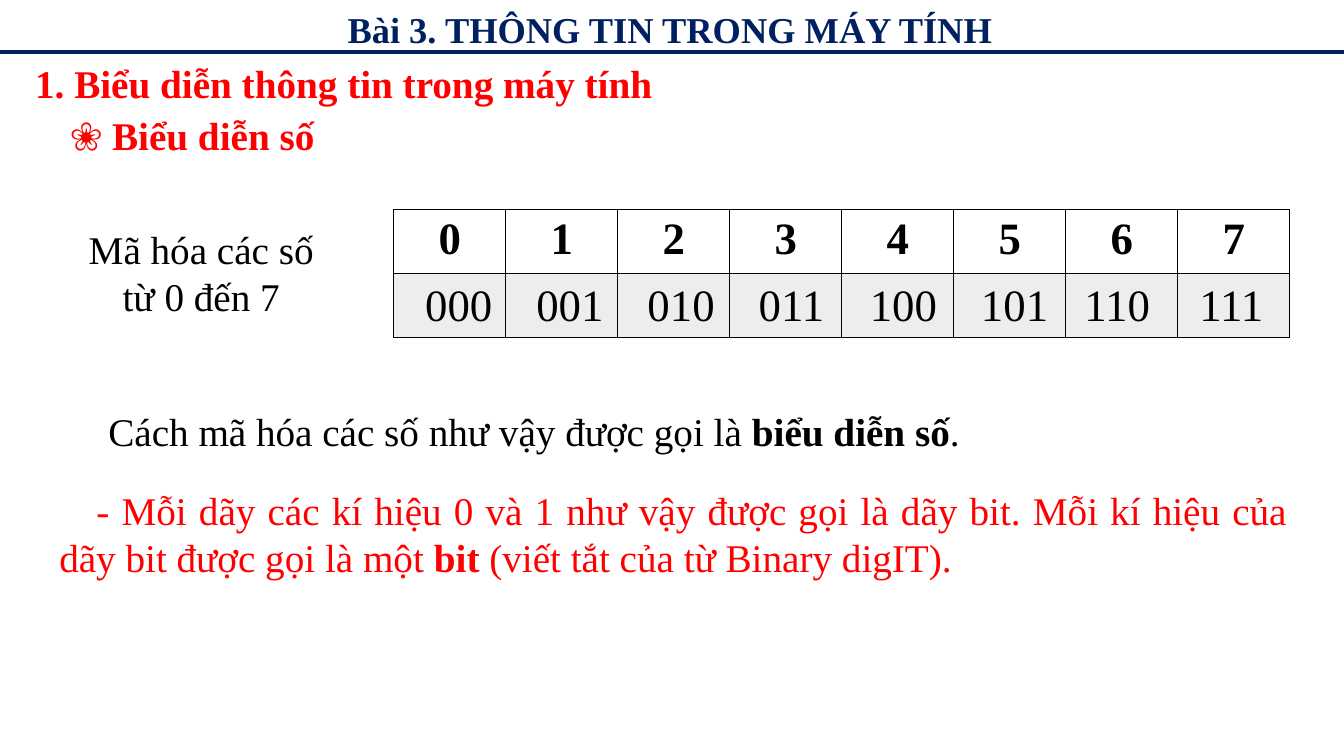
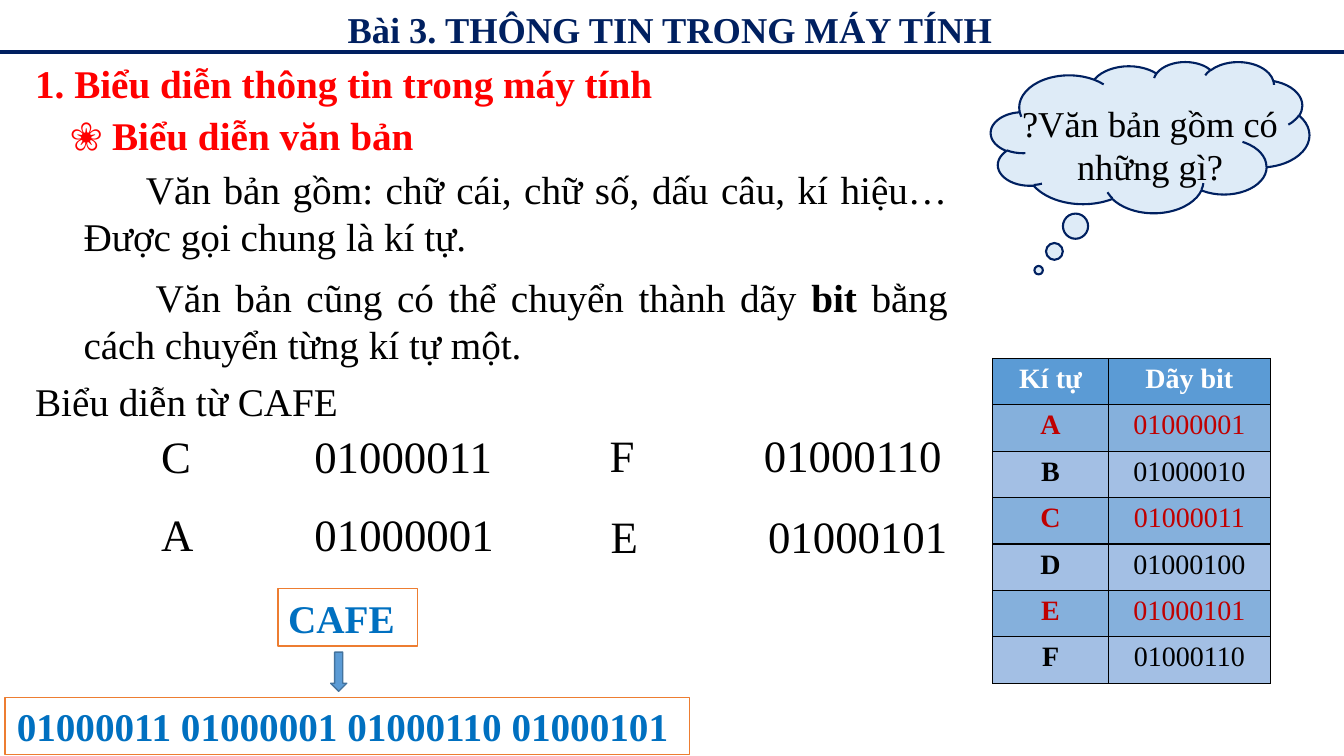
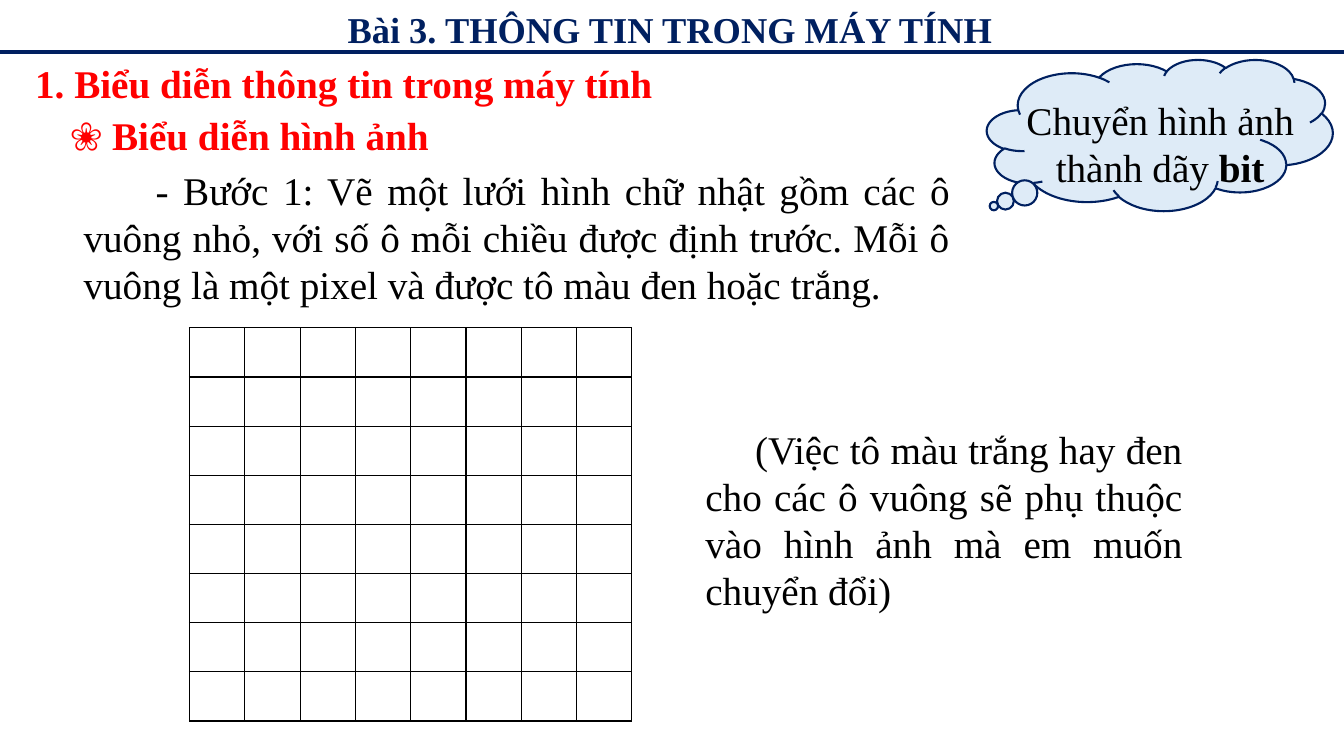
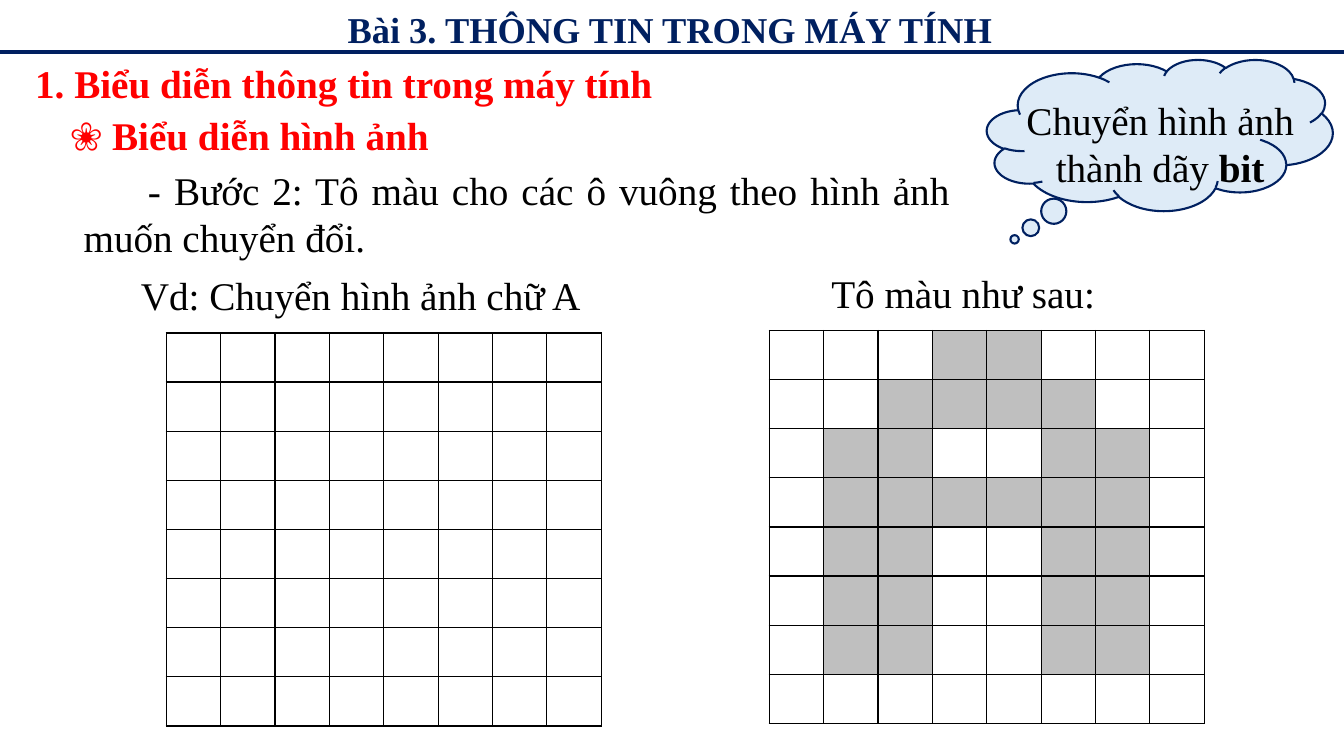
from lxml import etree
from pptx import Presentation
from pptx import util as u
from pptx.dml import color as c
from pptx.enum import shapes, text
from pptx.oxml import ns

Pt = u.Pt
RGB = c.RGBColor.from_string
NAVY = RGB("002060")
RED = RGB("FF0000")
DARK_RED = RGB("C00000")
BLACK = RGB("000000")
WHITE = RGB("FFFFFF")
GRAY = RGB("BFBFBF")
PALE_GRAY = RGB("EDEDED")
PALE_BLUE = RGB("DEEBF7")
BLUE = RGB("5B9BD5")
BLUE_EDGE = RGB("43739E")
BAND_DARK = RGB("85B0DC")
BAND_LIGHT = RGB("A3BFE4")
TEXT_BLUE = RGB("0070C0")
ORANGE = RGB("ED7D31")

FONT = "Times New Roman"
LEFT = text.PP_ALIGN.LEFT
CENTER = text.PP_ALIGN.CENTER
JUSTIFY = text.PP_ALIGN.JUSTIFY

GRID_SIZE = 8
GRID_ROW = 35.1
BLANK_GRID = ["." * GRID_SIZE] * GRID_SIZE
LETTER_A = [
    "...##...",
    "..####..",
    ".##..##.",
    ".######.",
    ".##..##.",
    ".##..##.",
    ".##..##.",
    "........",
]
CHARACTERS = "ABCDEF"


def bits(character):
    return format(ord(character), "08b")


def write(frame, words, size=28, color=BLACK, bold=False, align=LEFT, indent=0):
    """Fill the first paragraph; words between bars are bold."""
    para = frame.paragraphs[0]
    para.alignment = align
    if indent:
        para._p.get_or_add_pPr().set("indent", str(Pt(indent)))
    for index, part in enumerate(words.split("|")):
        span = para.add_run()
        span.text = part
        values = {"name": FONT, "size": Pt(size), "bold": bold or index % 2 == 1}
        for key, value in values.items():
            setattr(span.font, key, value)
        span.font.color.rgb = color


def add_text(page, left, top, width, height, words, **style):
    box = page.shapes.add_textbox(Pt(left), Pt(top), Pt(width), Pt(height))
    box.text_frame.word_wrap = True
    write(box.text_frame, words, **style)


def add_shape(page, kind, left, top, width, height, fill, edge, weight=1):
    shape = page.shapes.add_shape(kind, Pt(left), Pt(top), Pt(width), Pt(height))
    shape.shadow.inherit = False
    shape.fill.solid()
    shape.fill.fore_color.rgb = fill
    shape.line.color.rgb = edge
    shape.line.width = Pt(weight)
    return shape


def add_frame(page, left, top, width, words, align):
    box = add_shape(page, shapes.MSO_SHAPE.RECTANGLE, left, top, width, 41, WHITE, ORANGE)
    write(box.text_frame, words, color=TEXT_BLUE, bold=True, align=align)


def add_cloud(page, left, top, width, tail):
    cloud = add_shape(page, shapes.MSO_SHAPE.CLOUD_CALLOUT, left, top, width, 108,
                      PALE_BLUE, NAVY, 1.5)
    for index, value in enumerate(tail):
        cloud.adjustments[index] = value


def add_image_cloud(page, tail):
    add_cloud(page, 705, 42.5, 247, tail)
    add_text(page, 725, 65.5, 207.4, 75, "Chuyển hình ảnh thành dãy |bit|", align=CENTER)


def format_cell(cell, fill):
    props = cell._tc.get_or_add_tcPr()
    for side in ("a:lnL", "a:lnR", "a:lnT", "a:lnB"):
        line = etree.SubElement(props, ns.qn(side), w=str(Pt(1)))
        solid = etree.SubElement(line, ns.qn("a:solidFill"))
        etree.SubElement(solid, ns.qn("a:srgbClr"), val=str(BLACK))
    cell.fill.solid()
    cell.fill.fore_color.rgb = fill


def add_table(page, left, top, widths, row_height, rows):
    """Each cell is a (words, fill, style) triple."""
    holder = page.shapes.add_table(len(rows), len(widths), Pt(left), Pt(top),
                                   Pt(sum(widths)), Pt(row_height * len(rows)))
    table = holder.table
    table.first_row = table.horz_banding = False
    for column, width in zip(table.columns, widths):
        column.width = Pt(width)
    for r, row in enumerate(rows):
        table.rows[r].height = Pt(row_height)
        for col, (words, fill, style) in enumerate(row):
            cell = table.cell(r, col)
            format_cell(cell, fill)
            if words:
                write(cell.text_frame, words, align=CENTER, **style)


def add_pixels(page, left, top, column_width, pattern):
    rows = [[("", GRAY if mark == "#" else WHITE, {}) for mark in line] for line in pattern]
    add_table(page, left, top, [column_width] * GRID_SIZE, GRID_ROW, rows)


def start_page(deck, topic):
    page = deck.slides.add_slide(deck.slide_layouts[6])
    add_text(page, 18, 39, 461, 41, "1. Biểu diễn thông tin trong máy tính", color=RED, bold=True)
    rule = page.shapes.add_connector(shapes.MSO_CONNECTOR.STRAIGHT,
                                     Pt(0), Pt(37.2), deck.slide_width, Pt(37.2))
    rule.line.color.rgb = NAVY
    rule.line.width = Pt(2.25)
    etree.SubElement(rule._element.spPr, ns.qn("a:effectLst"))
    add_text(page, 23, 1.5, 911.5, 39, "Bài 3. THÔNG TIN TRONG MÁY TÍNH",
             size=26, color=NAVY, bold=True, align=CENTER)
    add_text(page, 43.2, 75.8, 400, 41, "❀ " + topic, color=RED, bold=True)
    return page


def build_numbers(deck):
    page = start_page(deck, "Biểu diễn số")
    header = [(str(n), WHITE, {"size": 32, "bold": True}) for n in range(8)]
    add_table(page, 281.3, 149.6, [80] * 8, 45.7, [header, [("", PALE_GRAY, {})] * 8])
    lefts = [296.6 + 79.4 * n for n in range(6)] + [767.5, 849.6]
    for n, left in enumerate(lefts):
        add_text(page, left, 194.4, 70, 46, format(n, "03b"), size=32)
    add_text(page, 35.3, 344, 891.4, 75,
             "- Mỗi dãy các kí hiệu 0 và 1 như vậy được gọi là dãy bit. Mỗi kí hiệu của "
             "dãy bit được gọi là một |bit| (viết tắt của từ Binary digIT).",
             color=RED, align=JUSTIFY, indent=26.5)
    add_text(page, 43.2, 157.5, 201, 75, "Mã hóa các số từ 0 đến 7", align=CENTER)
    add_text(page, 35.3, 287.5, 891.4, 41,
             "Cách mã hóa các số như vậy được gọi là |biểu diễn số|.",
             align=JUSTIFY, indent=35)


def build_characters(deck):
    page = start_page(deck, "Biểu diễn văn bản")
    add_cloud(page, 707.8, 44, 227.5, (-0.35, 0.88))
    add_text(page, 707.8, 68.4, 227.5, 70.5, "?Văn bản gồm có những gì?", size=26, align=CENTER)
    add_text(page, 52.6, 114.5, 631.4, 75,
             "Văn bản gồm: chữ cái, chữ số, dấu câu, kí hiệu… Được gọi chung là kí tự.",
             align=JUSTIFY, indent=44.5)
    add_text(page, 52.6, 191.5, 631.4, 75,
             "Văn bản cũng có thể chuyển thành dãy |bit |bằng cách chuyển từng kí tự một.",
             align=JUSTIFY, indent=51.5)

    heading = {"size": 20, "color": WHITE, "bold": True}
    rows = [[(words, BLUE, heading) for words in ("Kí tự", "Dãy bit")]]
    for index, character in enumerate(CHARACTERS):
        fill = BAND_LIGHT if index % 2 else BAND_DARK
        style = {"size": 20, "color": BLACK if index % 2 else DARK_RED}
        rows.append([(character, fill, {**style, "bold": True}), (bits(character), fill, style)])
    add_table(page, 709.2, 256, [82.5, 115.8], 33.15, rows)

    add_text(page, 18, 265.7, 278.6, 41, "Biểu diễn từ CAFE")
    for character, left, code_left, top in (("C", 108, 184.3, 303), ("A", 108, 185, 358.5),
                                            ("F", 428.4, 505.4, 302), ("E", 429, 509, 360)):
        add_text(page, left, top, 63.4, 46, character, size=32)
        add_text(page, code_left, top, 207.4, 46, bits(character), size=32, align=CENTER)
    add_frame(page, 198.7, 420.5, 99.4, "CAFE", LEFT)
    add_frame(page, 3.6, 498.2, 489, "01000011 01000001 01000110 01000101 ", CENTER)
    add_shape(page, shapes.MSO_SHAPE.DOWN_ARROW, 236.2, 465.8, 11.5, 28, BLUE, BLUE_EDGE)


def build_pixel_grid(deck):
    page = start_page(deck, "Biểu diễn hình ảnh")
    add_image_cloud(page, (-0.48, 0.47))
    add_text(page, 52.6, 115.2, 633, 109,
             "- Bước 1: Vẽ một lưới hình chữ nhật gồm các ô vuông nhỏ, với số ô mỗi chiều "
             "được định trước. Mỗi ô vuông là một pixel và được tô màu đen hoặc trắng.",
             align=JUSTIFY, indent=51.5)
    add_pixels(page, 135.4, 234.2, 39.5, BLANK_GRID)
    add_text(page, 496.8, 300.2, 355, 143,
             "(Việc tô màu trắng hay đen cho các ô vuông sẽ phụ thuộc vào hình ảnh "
             "mà em muốn chuyển đổi)", align=JUSTIFY, indent=35.5)


def build_letter(deck):
    page = start_page(deck, "Biểu diễn hình ảnh")
    add_image_cloud(page, (-0.42, 0.69))
    add_text(page, 52.6, 115.2, 633, 75,
             "- Bước 2: Tô màu cho các ô vuông theo hình ảnh muốn chuyển đổi.",
             align=JUSTIFY, indent=46)
    add_pixels(page, 549.5, 236, 38.85, LETTER_A)
    add_text(page, 65.5, 190, 463, 41, "Vd: Chuyển hình ảnh chữ A", align=JUSTIFY, indent=28)
    add_text(page, 558.7, 188.8, 245.5, 41, "Tô màu như sau:", align=JUSTIFY, indent=28)
    add_pixels(page, 118.8, 237.8, 38.85, BLANK_GRID)


def main():
    deck = Presentation()
    deck.slide_width, deck.slide_height = Pt(960), Pt(540)
    for build in (build_numbers, build_characters, build_pixel_grid, build_letter):
        build(deck)
    deck.save("out.pptx")


if __name__ == "__main__":
    main()
